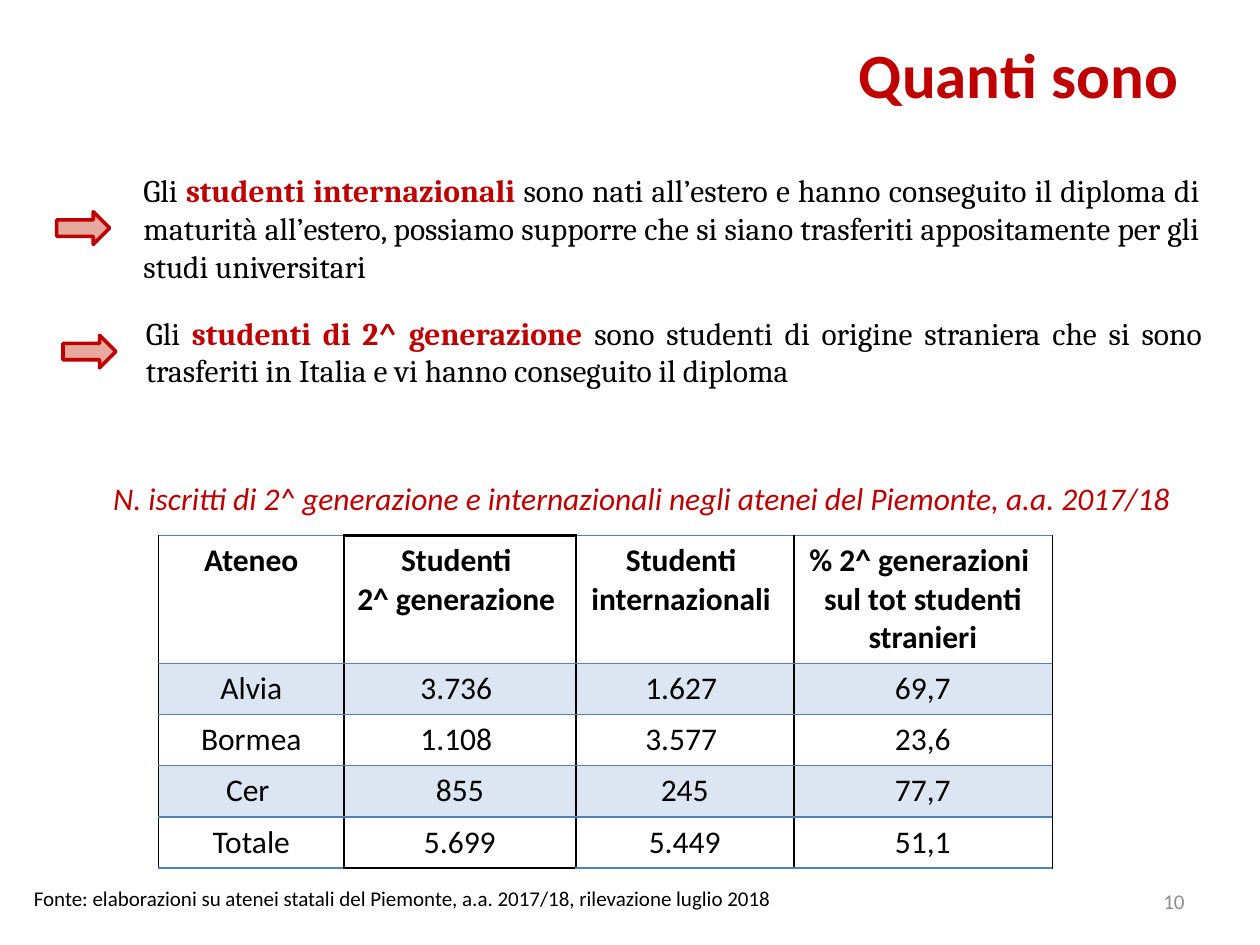
from lxml import etree
from pptx import Presentation
from pptx.dml.color import RGBColor
from pptx.enum.shapes import MSO_SHAPE
from pptx.enum.text import MSO_ANCHOR, PP_ALIGN
from pptx.oxml.ns import qn
from pptx.util import Inches, Pt

LEFT, CENTER, RIGHT, JUSTIFY = PP_ALIGN.LEFT, PP_ALIGN.CENTER, PP_ALIGN.RIGHT, PP_ALIGN.JUSTIFY
MIDDLE, TOP = MSO_ANCHOR.MIDDLE, MSO_ANCHOR.TOP
DOWN_ARROW = MSO_SHAPE.DOWN_ARROW
RED, BLACK, BLUE, TINT, GREY = "C00000", "000000", "4F81BD", "DCE6F2", "8B8B8B"

deck = Presentation()
deck.slide_width, deck.slide_height = Inches(10), Inches(7.5)
COLUMN, ROW = deck.slide_width / 100, deck.slide_height / 75
page = deck.slides.add_slide(deck.slide_layouts[5])


def paint(fill, colour):
    fill.solid()
    fill.fore_color.rgb = RGBColor.from_string(colour)


def write(para, runs, align, size, font="Calibri"):
    para.alignment = align
    for text, colour, bold, italic in runs:
        span = para.add_run()
        span.text = text
        span.font.name, span.font.size = font, Pt(size)
        span.font.bold, span.font.italic = bold, italic
        paint(span.font.fill, colour)


title = page.shapes.title
title.left, title.top = int(6.8 * COLUMN), int(1.3 * ROW)
title.width, title.height = int(90 * COLUMN), int(9.1 * ROW)
title.text_frame.vertical_anchor = MIDDLE
title.text_frame.margin_right = int(3.3 * COLUMN)
write(title.text_frame.paragraphs[0], [("Quanti sono", RED, True, False)], RIGHT, 36)

headings = ["Ateneo", "Studenti \n2^ generazione ", "Studenti \ninternazionali ",
            "% 2^ generazioni \nsul tot studenti stranieri"]
rows = [
    headings,
    ["Alvia", "3.736 ", "1.627 ", "69,7"],
    ["Bormea", "1.108 ", "3.577 ", "23,6"],
    ["Cer ", "855", "245", "77,7"],
    ["Totale", "5.699", "5.449", "51,1"],
]
column_widths = [14.7, 18.4, 17.3, 20.5]
row_heights = [7.6] + [3.4] * 4
last_row, last_column = len(rows) - 1, len(headings) - 1
frame = page.shapes.add_table(
    len(rows), len(headings), int(12.6 * COLUMN), int(42.5 * ROW),
    int(sum(column_widths) * COLUMN), int(sum(row_heights) * ROW))
table = frame.table
table.first_row = table.horz_banding = False
for column, width in zip(table.columns, column_widths):
    column.width = int(width * COLUMN)
for row, height in zip(table.rows, row_heights):
    row.height = int(height * ROW)

for r, values in enumerate(rows):
    for c, value in enumerate(values):
        cell = table.cell(r, c)
        cell.margin_left = cell.margin_right = Inches(0.01)
        cell.margin_top = cell.margin_bottom = Inches(0.05)
        for i, text in enumerate(value.split("\n")):
            para = cell.text_frame.add_paragraph() if i else cell.text_frame.paragraphs[0]
            write(para, [(text, BLACK, r == 0, False)], CENTER, 18)
        inner, outer, rule = (BLACK, 1.47), (BLACK, 0.5), (BLUE, 0.96)
        borders = {
            "a:lnL": outer if c == 0 else inner,
            "a:lnR": outer if c == last_column else inner,
            "a:lnT": inner if (r, c) == (0, 1) else rule,
            "a:lnB": inner if (r, c) == (last_row, 1) else rule,
        }
        properties = cell._tc.get_or_add_tcPr()
        for side, (colour, weight) in borders.items():
            line = etree.SubElement(properties, qn(side), w=str(Pt(weight)))
            solid = etree.SubElement(line, qn("a:solidFill"))
            etree.SubElement(solid, qn("a:srgbClr"), val=colour)
        if r % 2:
            paint(cell.fill, TINT)
        else:
            cell.fill.background()

for left, top in [(5.3, 16), (5.8, 25.8)]:
    arrow = page.shapes.add_shape(
        DOWN_ARROW, int(left * COLUMN), int(top * ROW), int(2.6 * COLUMN), int(4.2 * ROW))
    arrow.rotation = 270
    arrow.shadow.inherit = False
    paint(arrow.fill, "CF543F")
    tone = next(arrow.element.iter(qn("a:srgbClr")))
    etree.SubElement(tone, qn("a:alpha"), val="50000")
    paint(arrow.line.fill, RED)
    arrow.line.width = Pt(2)

international = [
    ("Gli", BLACK, False, False),
    (" studenti internazionali", RED, True, False),
    (" sono nati all’estero e hanno conseguito il diploma di maturità all’estero, possiamo "
     "supporre che si siano trasferiti appositamente per gli studi universitari",
     BLACK, False, False),
]
second_generation = [
    ("Gli", BLACK, False, False),
    (" studenti di 2^ generazione", RED, True, False),
    (" sono studenti di origine straniera che si sono trasferiti in Italia e vi hanno "
     "conseguito il diploma ", BLACK, False, False),
]
caption = [("N. iscritti di 2^ generazione e internazionali negli atenei del Piemonte, "
            "a.a. 2017/18", RED, False, True)]
source = [("Fonte: elaborazioni su atenei statali del Piemonte, a.a. 2017/18, "
           "rilevazione luglio 2018", BLACK, False, False)]
number = [("10", GREY, False, False)]

texts = [
    (10.4, 13.1, 85.8, 10, international, JUSTIFY, 18, "Cambria", TOP),
    (10.6, 24.4, 85.8, 7, second_generation, JUSTIFY, 18, "Cambria", TOP),
    (8, 37.5, 87.6, 4, caption, LEFT, 18, "Calibri", TOP),
    (1.7, 69.8, 75.6, 3, source, LEFT, 12, "Calibri", TOP),
    (71.7, 69.5, 23.3, 4, number, RIGHT, 12, "Calibri", MIDDLE),
]
for left, top, width, height, runs, align, size, font, anchor in texts:
    box = page.shapes.add_textbox(
        int(left * COLUMN), int(top * ROW), int(width * COLUMN), int(height * ROW))
    box.text_frame.word_wrap = True
    box.text_frame.vertical_anchor = anchor
    write(box.text_frame.paragraphs[0], runs, align, size, font)

deck.save("out.pptx")
